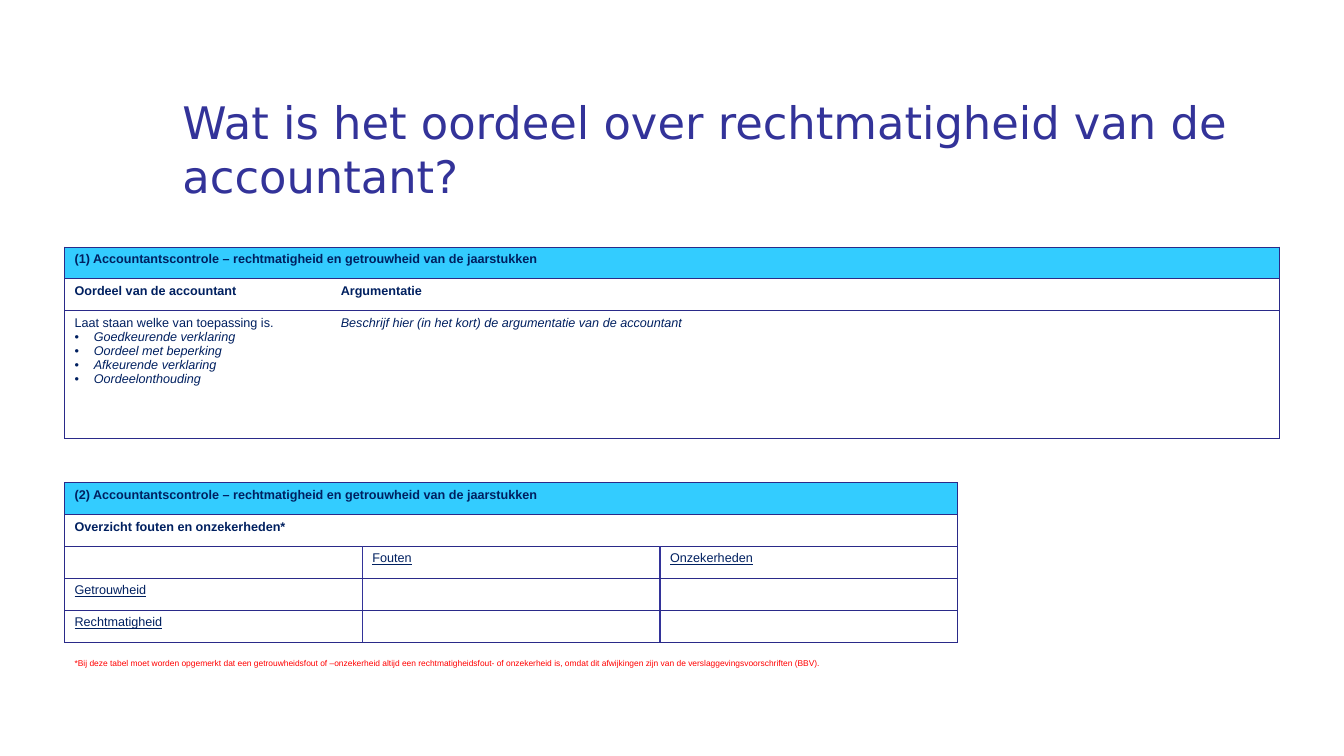
from dataclasses import dataclass

import pptx
import pptx.dml.color
import pptx.enum.text
import pptx.oxml
import pptx.oxml.ns
import pptx.util
from lxml import etree

Inches = pptx.util.Inches
Pt = pptx.util.Pt
qn = pptx.oxml.ns.qn


@dataclass(frozen=True)
class Theme:
    title: str = "333399"
    text: str = "002060"
    note: str = "FF0000"
    header: str = "33CCFF"
    border: str = "2A2A89"
    divider: str = "333399"
    title_font: str = "DejaVu Sans"
    table_font: str = "Arial"
    title_size: int = 32
    table_size: int = 9
    note_size: int = 6
    border_width: float = 0.75
    divider_width: float = 1


THEME = Theme()
BULLET_INDENT = 0.19
ROW_HEIGHT = 0.316


def rgb(color):
    return pptx.dml.color.RGBColor.from_string(color)


def write(paragraph, text, font=THEME.table_font, size=THEME.table_size, color=THEME.text,
          bold=False, italic=False, underline=False, bullet=False):
    if bullet:
        properties = paragraph._p.get_or_add_pPr()
        properties.set("marL", str(Inches(BULLET_INDENT)))
        properties.set("indent", str(-Inches(BULLET_INDENT)))
        etree.SubElement(properties, qn("a:buFont")).set("typeface", font)
        etree.SubElement(properties, qn("a:buChar")).set("char", "•")
    if not text:
        # An empty cell keeps the small type size so its row does not grow
        etree.SubElement(paragraph._p, qn("a:endParaRPr")).set("sz", str(size * 100))
        return
    run = paragraph.add_run()
    run.text = text
    run.font.name = font
    run.font.size = Pt(size)
    run.font.color.rgb = rgb(color)
    run.font.bold = bold
    run.font.italic = italic
    run.font.underline = underline


def set_borders(cell, **sides):
    """Each side (L, R, T, B) is a (color, width) pair or None."""
    properties = cell._tc.get_or_add_tcPr()
    for side in "LRTB":
        line = etree.SubElement(properties, qn(f"a:ln{side}"))
        if sides.get(side):
            color, width = sides[side]
            line.set("w", str(Pt(width)))
            fill = etree.SubElement(line, qn("a:solidFill"))
            etree.SubElement(fill, qn("a:srgbClr")).set("val", color)
        else:
            etree.SubElement(line, qn("a:noFill"))


def add_grid(slide, box, heights, rows, merges, divided_rows=(), open_rows=()):
    """rows holds cells; each cell is a list of (text, format) paragraphs."""
    left, top, width = box
    columns = len(rows[0])
    table = slide.shapes.add_table(len(rows), columns, Inches(left), Inches(top),
                                   Inches(width), Inches(sum(heights))).table
    table.first_row = table.horz_banding = False
    for row, height in zip(table.rows, heights):
        row.height = Inches(height)
    for row, first, last in merges:
        table.cell(row, first).merge(table.cell(row, last))

    edge = (THEME.border, THEME.border_width)
    divider = (THEME.divider, THEME.divider_width)
    for r, contents in enumerate(rows):
        outer = None if r in open_rows else edge
        inner = divider if r in divided_rows else None
        for c, content in enumerate(contents):
            cell = table.cell(r, c)
            reaches_right = c == columns - 1 or (r, c, columns - 1) in merges
            set_borders(cell, L=outer if c == 0 else inner,
                        R=outer if reaches_right else inner, T=edge, B=outer)
            if r == 0:
                cell.fill.solid()
                cell.fill.fore_color.rgb = rgb(THEME.header)
            else:
                cell.fill.background()
            for i, (text, style) in enumerate(content or [("", {})]):
                frame = cell.text_frame
                write(frame.add_paragraph() if i else frame.paragraphs[0], text, **style)
    return table


def add_title(slide, box):
    title = slide.shapes.title
    title.left, title.top, title.width, title.height = map(Inches, box)
    frame = title.text_frame
    frame.word_wrap = True
    frame.auto_size = pptx.enum.text.MSO_AUTO_SIZE.NONE
    frame.vertical_anchor = pptx.enum.text.MSO_ANCHOR.MIDDLE
    frame.paragraphs[0].alignment = pptx.enum.text.PP_ALIGN.LEFT
    write(frame.paragraphs[0], "Wat is het oordeel over rechtmatigheid van de accountant?",
          font=THEME.title_font, size=THEME.title_size, color=THEME.title)


def add_opinion_table(slide, box):
    bold, italic = {"bold": True}, {"italic": True}
    opinions = ["Goedkeurende verklaring", "Oordeel met beperking",
                "Afkeurende verklaring", "Oordeelonthouding"]
    rows = [
        [[("(1) Accountantscontrole – rechtmatigheid en getrouwheid van de jaarstukken", bold)],
         None],
        [[("Oordeel van de accountant", bold)], [("Argumentatie", bold)]],
        [[("Laat staan welke van toepassing is.", {})]
         + [(opinion, {"italic": True, "bullet": True}) for opinion in opinions],
         [("Beschrijf hier (in het kort) de argumentatie van de accountant", italic)]],
    ]
    table = add_grid(slide, box, [ROW_HEIGHT, ROW_HEIGHT, 1.27], rows, merges=[(0, 0, 1)])
    opinion_width = 2.64
    table.columns[0].width = Inches(opinion_width)
    table.columns[1].width = Inches(box[2] - opinion_width)


def add_errors_table(slide, box):
    bold, underline = {"bold": True}, {"underline": True}
    note = {"size": THEME.note_size, "color": THEME.note}
    rows = [
        [[("(2) Accountantscontrole – rechtmatigheid en getrouwheid van de jaarstukken", bold)],
         None, None],
        [[("Overzicht fouten en onzekerheden*", bold)], None, None],
        [None, [("Fouten", underline)], [("Onzekerheden", underline)]],
        [[("Getrouwheid", underline)], None, None],
        [[("Rechtmatigheid", underline)], None, None],
        [[("*Bij deze tabel moet worden opgemerkt dat een getrouwheidsfout of –onzekerheid "
           "altijd een rechtmatigheidsfout- of onzekerheid is, omdat dit afwijkingen zijn "
           "van de verslaggevingsvoorschriften (BBV).", note)], None, None],
    ]
    note_row = len(rows) - 1
    table = add_grid(slide, box, [ROW_HEIGHT] * len(rows), rows,
                     merges=[(0, 0, 2), (1, 1, 2), (note_row, 0, 2)],
                     divided_rows=(2, 3, 4), open_rows=(note_row,))
    table.cell(note_row, 0).vertical_anchor = pptx.enum.text.MSO_ANCHOR.BOTTOM


def main():
    deck = pptx.Presentation()
    deck.slide_width, deck.slide_height = Inches(13.33), Inches(7.5)
    slide = deck.slides.add_slide(deck.slide_layouts.get_by_name("Title Only"))
    add_title(slide, (1.71, 0.85, 11.16, 1.25))
    add_opinion_table(slide, (0.64, 2.45, 12.05))
    add_errors_table(slide, (0.64, 4.79, 8.86))
    deck.save("out.pptx")


if __name__ == "__main__":
    main()
